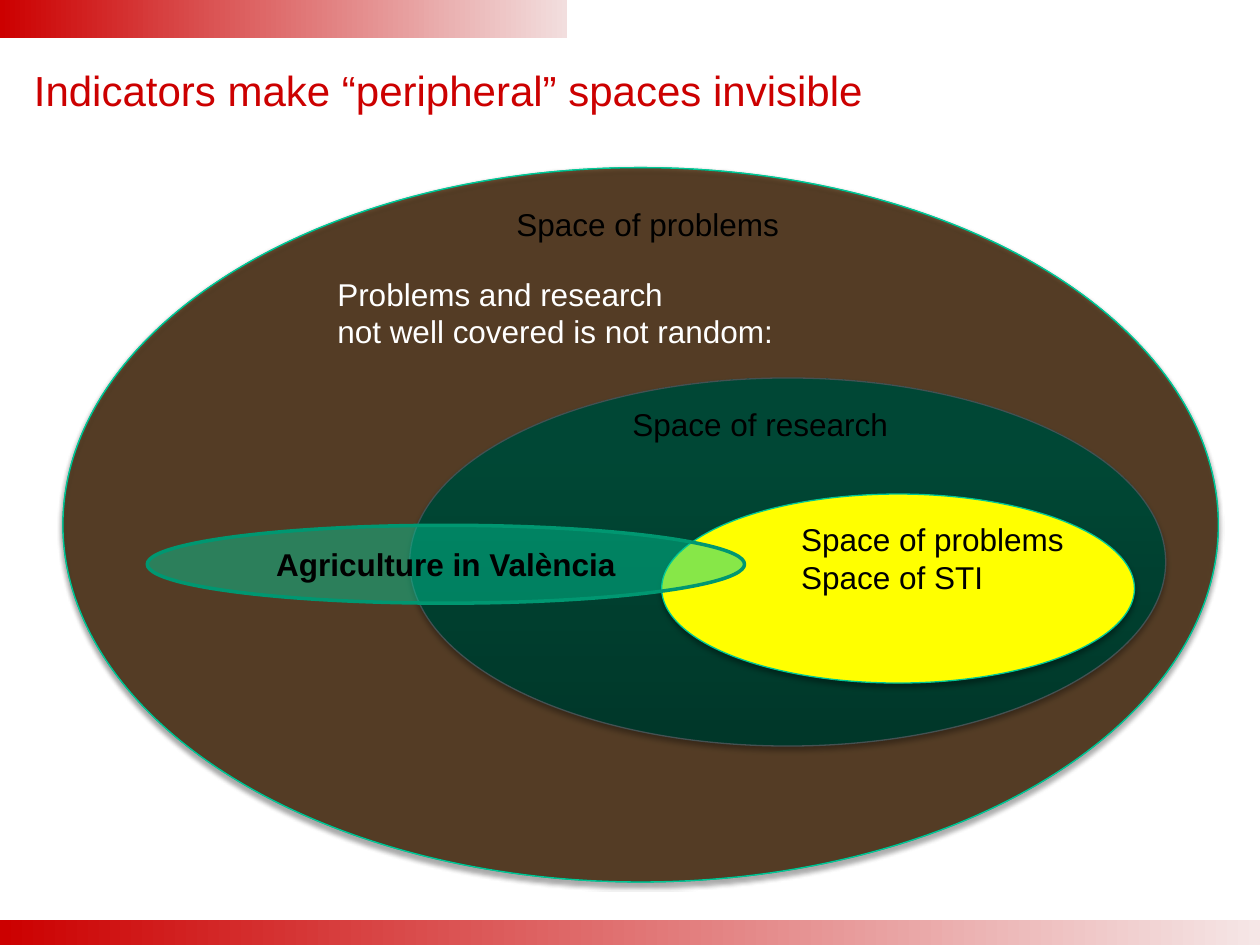
from dataclasses import dataclass
from typing import Optional

from lxml.etree import SubElement
from pptx import Presentation
from pptx.dml.color import RGBColor
from pptx.enum.shapes import MSO_SHAPE
from pptx.enum.text import MSO_ANCHOR, MSO_AUTO_SIZE, PP_ALIGN
from pptx.oxml.ns import qn
from pptx.util import Cm, Pt

RED = RGBColor(0xCC, 0x00, 0x00)
PALE_RED = RGBColor(0xF5, 0xE6, 0xE6)
PALE_PINK = RGBColor(0xF2, 0xDE, 0xDE)
ORANGE = RGBColor(0xFF, 0x80, 0x00)
YELLOW = RGBColor(0xFF, 0xFF, 0x00)
BLACK = RGBColor(0x00, 0x00, 0x00)
WHITE = RGBColor(0xFF, 0xFF, 0xFF)
GREEN = RGBColor(0x00, 0xC8, 0x96)
GREEN_DARK = RGBColor(0x00, 0x98, 0x72)
GREEN_MID = RGBColor(0x00, 0xC6, 0x94)
GREEN_LIGHT = RGBColor(0x00, 0xC7, 0x95)
MINT = RGBColor(0x00, 0xCC, 0x99)
MINT_EDGE = RGBColor(0x00, 0x97, 0x71)
PALE_BLUE = RGBColor(0xBB, 0xE0, 0xE3)
FONT = "Arial"

Box = tuple[float, float, float, float]  # left, top, width, height in cm
Stops = tuple[tuple[int, RGBColor], ...]  # position in percent, colour


@dataclass
class Bar:
    box: Box
    end: RGBColor


@dataclass
class Space:
    box: Box
    fill: Optional[RGBColor] = None
    opacity: int = 100
    stops: Stops = ()
    edge: RGBColor = GREEN
    edge_width: float = 0.75
    shadow: bool = True
    label: str = ""


@dataclass
class Caption:
    box: Box
    lines: tuple[str, ...]
    color: RGBColor = BLACK


def lengths(box: Box) -> list[Cm]:
    return [Cm(value) for value in box]


def add_run(paragraph, text: str, size: int, color: RGBColor, bold: bool = False) -> None:
    run = paragraph.add_run()
    run.text = text
    run.font.name = FONT
    run.font.size = Pt(size)
    run.font.color.rgb = color
    run.font.bold = bold


def set_gradient(shape, stops: Stops, angle: int) -> None:
    """Linear gradient, angle clockwise in degrees."""
    shape.fill.gradient()
    gradient = shape._element.spPr.find(qn("a:gradFill"))
    for child in list(gradient):
        gradient.remove(child)
    stop_list = SubElement(gradient, qn("a:gsLst"))
    for position, color in stops:
        stop = SubElement(stop_list, qn("a:gs"), pos=str(position * 1000))
        SubElement(stop, qn("a:srgbClr"), val=str(color))
    SubElement(gradient, qn("a:lin"), ang=str(angle * 60000), scaled="0")


def set_opacity(color_element, percent: int) -> None:
    SubElement(color_element, qn("a:alpha"), val=str(percent * 1000))


def add_shadow(shape) -> None:
    effects = shape._element.spPr.find(qn("a:effectLst"))
    shadow = SubElement(effects, qn("a:outerShdw"), blurRad=str(Pt(3.1)),
                        dist=str(Pt(1.8)), dir="5400000", rotWithShape="0")
    set_opacity(SubElement(shadow, qn("a:srgbClr"), val=str(BLACK)), 35)


def draw_bar(slide, bar: Bar) -> None:
    shape = slide.shapes.add_shape(MSO_SHAPE.RECTANGLE, *lengths(bar.box))
    shape.shadow.inherit = False
    shape.line.fill.background()
    set_gradient(shape, ((0, RED), (100, bar.end)), 0)


def draw_space(slide, space: Space) -> None:
    ellipse = slide.shapes.add_shape(MSO_SHAPE.OVAL, *lengths(space.box))
    ellipse.shadow.inherit = False
    if space.stops:
        set_gradient(ellipse, space.stops, 270)
    else:
        ellipse.fill.solid()
        ellipse.fill.fore_color.rgb = space.fill
        if space.opacity < 100:
            solid = ellipse._element.spPr.find(qn("a:solidFill"))
            set_opacity(solid[0], space.opacity)
    ellipse.line.color.rgb = space.edge
    ellipse.line.width = Pt(space.edge_width)
    if space.shadow:
        add_shadow(ellipse)
    if space.label:
        frame = ellipse.text_frame
        frame.vertical_anchor = MSO_ANCHOR.MIDDLE
        frame.paragraphs[0].alignment = PP_ALIGN.CENTER
        add_run(frame.paragraphs[0], space.label, 18, BLACK, bold=True)


def draw_caption(slide, caption: Caption) -> None:
    frame = slide.shapes.add_textbox(*lengths(caption.box)).text_frame
    frame.word_wrap = False
    frame.auto_size = MSO_AUTO_SIZE.SHAPE_TO_FIT_TEXT
    for index, line in enumerate(caption.lines):
        paragraph = frame.add_paragraph() if index else frame.paragraphs[0]
        add_run(paragraph, line, 18, caption.color)


PROBLEMS_BOX = (1.27, 3.38, 23.29, 14.4)
RESEARCH_STOPS = ((0, GREEN_DARK), (80, GREEN_MID), (100, GREEN_LIGHT))

# Back to front: the dark veil dims everything drawn before it
LAYERS = (
    Bar((0, 18.54, 25.4, 0.51), PALE_RED),
    Bar((0, 0, 11.43, 0.76), PALE_PINK),
    Space(PROBLEMS_BOX, ORANGE, opacity=50),
    Caption((10.16, 4.01, 5.87, 1.02), ("Space of problems",)),
    Space((8.26, 7.62, 15.24, 7.42), stops=RESEARCH_STOPS, edge=PALE_BLUE),
    Caption((12.5, 8.05, 5.72, 1.02), ("Space of research",)),
    Space(PROBLEMS_BOX, BLACK, opacity=55),
    Space((13.34, 9.96, 9.53, 3.81), YELLOW),
    Caption((15.9, 10.36, 5.87, 1.8), ("Space of problems", "Space of STI")),
    Caption((6.55, 5.41, 9.37, 1.8),
            ("Problems and research", "not well covered is not random:"), WHITE),
    Space((2.97, 10.59, 12.04, 1.57), MINT, opacity=47, edge=MINT_EDGE,
          edge_width=2, shadow=False, label="Agriculture in València"),
)
DRAW = {Bar: draw_bar, Space: draw_space, Caption: draw_caption}


def main() -> None:
    deck = Presentation()
    deck.slide_width, deck.slide_height = Cm(25.4), Cm(19.05)
    slide = deck.slides.add_slide(deck.slide_layouts[5])

    # Title
    title = slide.shapes.title
    title.left, title.top, title.width, title.height = lengths((0.43, 0.64, 24.33, 2.34))
    title.text_frame.vertical_anchor = MSO_ANCHOR.MIDDLE
    heading = title.text_frame.paragraphs[0]
    heading.alignment = PP_ALIGN.LEFT
    add_run(heading, "Indicators make “peripheral” spaces invisible", 24, RED)

    # Bars, nested spaces and captions
    for layer in LAYERS:
        DRAW[type(layer)](slide, layer)

    deck.save("out.pptx")


if __name__ == "__main__":
    main()
